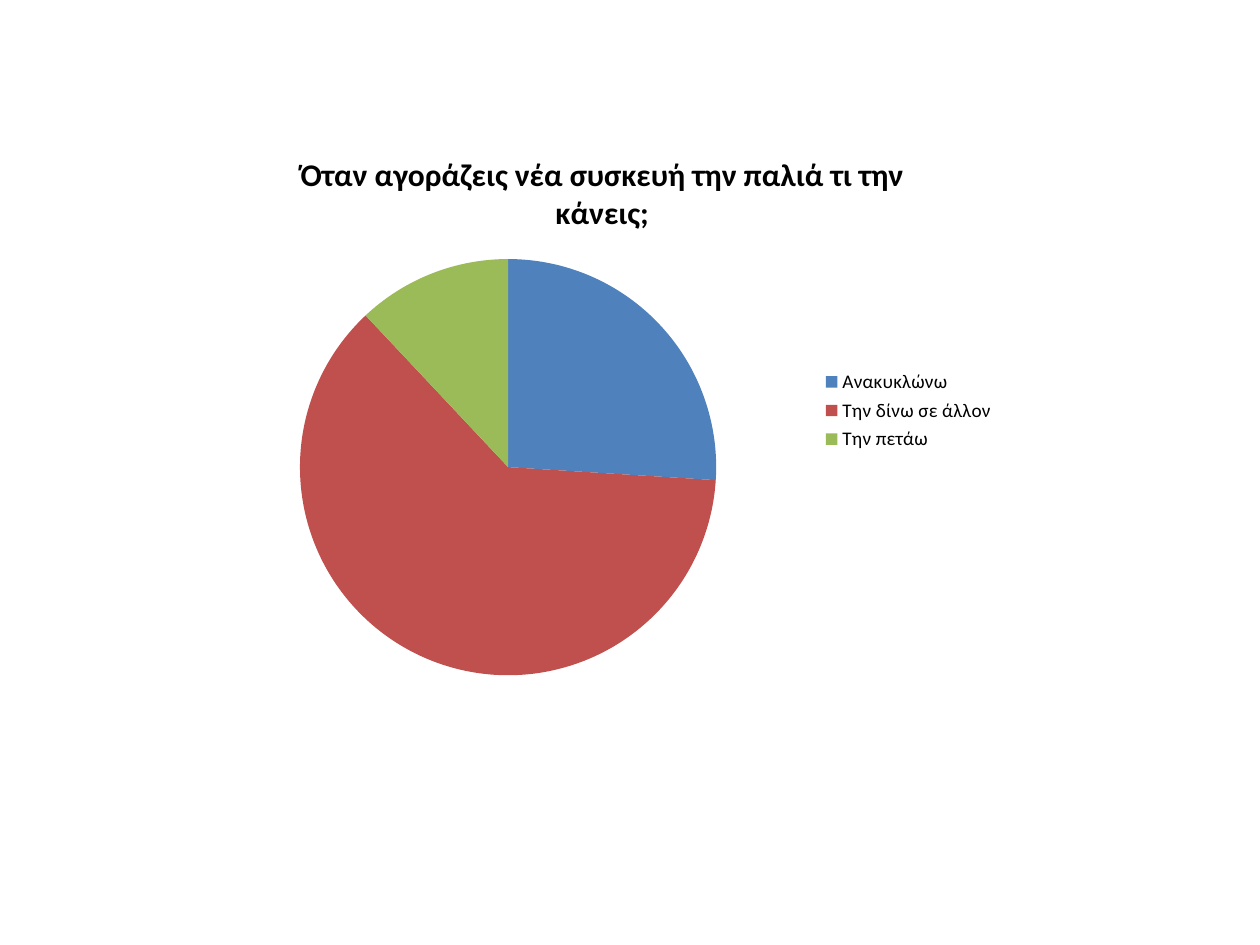
from pptx import Presentation
from pptx.chart.data import CategoryChartData
from pptx.dml.color import RGBColor
from pptx.enum.chart import XL_CHART_TYPE, XL_LEGEND_POSITION
from pptx.util import Inches, Pt

WIDE, HIGH = Inches(10), Inches(7.5)
FACE = "Calibri"
HUES = {"text": "000000", "blue": "4F81BD", "red": "C0504D", "green": "9BBB59"}

ASK = "Όταν αγοράζεις νέα συσκευή την παλιά τι την κάνεις;"
# Answer, share in percent, slice colour
PARTS = [
    ("Ανακυκλώνω", 26, "blue"),
    ("Την δίνω σε άλλον", 62, "red"),
    ("Την πετάω", 12, "green"),
]


def hue(name):
    return RGBColor.from_string(HUES[name])


def style(font, size, bold=False):
    font.name, font.size, font.bold = FACE, Pt(size), bold
    font.color.rgb = hue("text")


def add_pie(slide, left, top, wide, high):
    """Add the pie; the place is given as shares of the slide."""
    data = CategoryChartData()
    data.categories = [name for name, _, _ in PARTS]
    data.add_series(ASK, [share for _, share, _ in PARTS])
    chart = slide.shapes.add_chart(
        XL_CHART_TYPE.PIE, int(WIDE * left), int(HIGH * top),
        int(WIDE * wide), int(HIGH * high), data).chart
    style(chart.font, 10)

    # Slices
    plot = chart.plots[0]
    plot.vary_by_categories = True
    for i, (_, _, name) in enumerate(PARTS):
        fill = plot.series[0].points[i].format.fill
        fill.solid()
        fill.fore_color.rgb = hue(name)
    return chart


def add_title(chart, text):
    chart.has_title = True
    title = chart.chart_title
    title.include_in_layout = False
    run = title.text_frame.paragraphs[0].add_run()
    run.text = text
    style(run.font, 18, bold=True)


def add_key(chart):
    chart.has_legend = True
    key = chart.legend
    key.position = XL_LEGEND_POSITION.RIGHT
    key.include_in_layout = False
    style(key.font, 11)


def main():
    deck = Presentation()
    deck.slide_width, deck.slide_height = WIDE, HIGH
    slide = deck.slides.add_slide(deck.slide_layouts[6])

    # Survey chart with its question and legend
    chart = add_pie(slide, 0.156, 0.136, 0.644, 0.597)
    add_title(chart, ASK)
    add_key(chart)

    deck.save("out.pptx")


if __name__ == "__main__":
    main()
